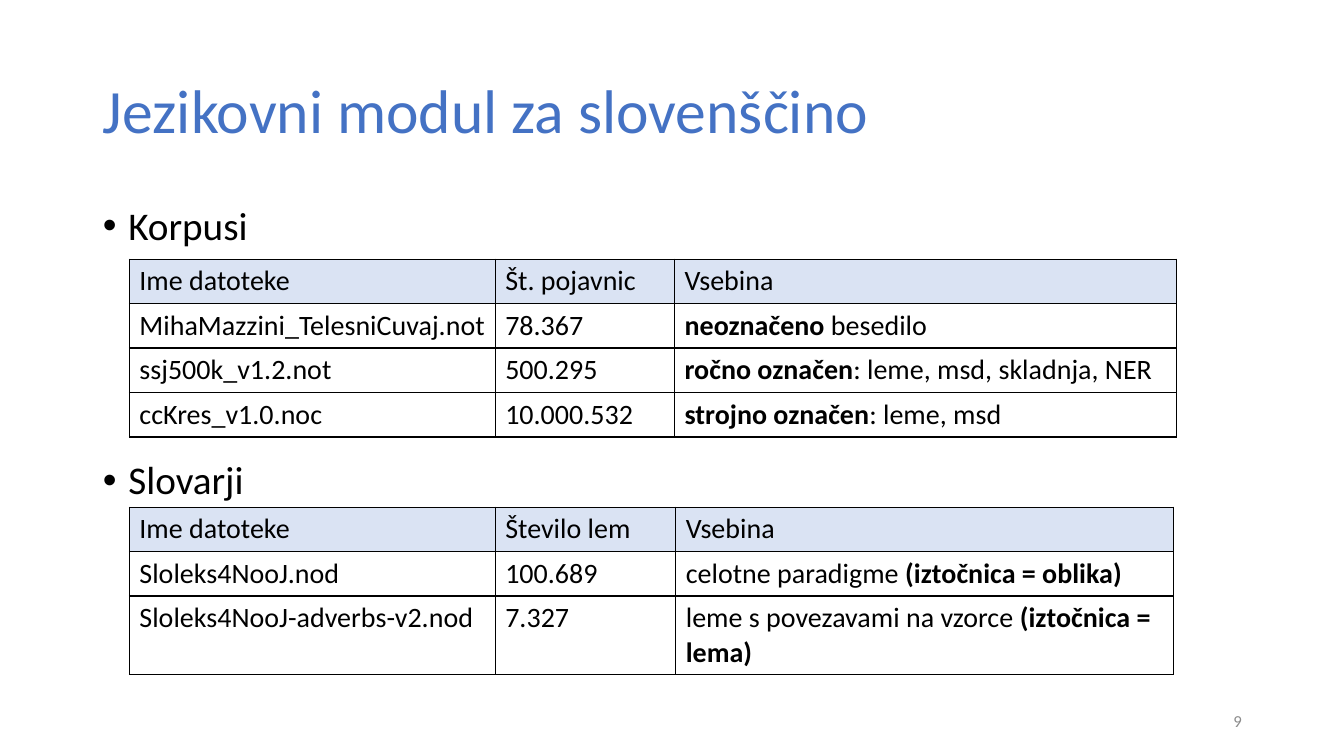
import pptx
import pptx.dml.color
import pptx.enum.text
import pptx.oxml
import pptx.oxml.ns
import pptx.util
from pptx.util import Cm

FONT = "Calibri"
BLACK, BLUE, PALE_BLUE, GREY = "000000", "4472C4", "DAE3F3", "8C8C8C"
ALIGN = pptx.enum.text.PP_ALIGN
ANCHOR = pptx.enum.text.MSO_ANCHOR
NS = pptx.oxml.ns.nsdecls("a")

# Text between ** marks is bold
CORPORA = [
    ["Ime datoteke", "Št. pojavnic", "Vsebina"],
    ["MihaMazzini_TelesniCuvaj.not", "78.367", "**neoznačeno** besedilo"],
    ["ssj500k_v1.2.not", "500.295", "**ročno označen**: leme, msd, skladnja, NER"],
    ["ccKres_v1.0.noc", "10.000.532", "**strojno označen**: leme, msd"],
]
DICTIONARIES = [
    ["Ime datoteke", "Število lem", "Vsebina"],
    ["Sloleks4NooJ.nod", "100.689", "celotne paradigme **(iztočnica = oblika)**"],
    ["Sloleks4NooJ-adverbs-v2.nod", "7.327",
     "leme s povezavami na vzorce **(iztočnica = lema)**"],
]


def rgb(color):
    return pptx.dml.color.RGBColor.from_string(color)


def write(p, text, size=20, color=BLACK, align=ALIGN.LEFT, spacing=None, before=None):
    p.alignment = align
    if spacing:
        p.line_spacing = spacing
    if before:
        p.space_before = pptx.util.Pt(before)
    for i, part in enumerate(text.split("**")):
        if part:
            r = p.add_run()
            r.text = part
            r.font.name = FONT
            r.font.size = pptx.util.Pt(size)
            r.font.bold = i % 2 == 1
            r.font.color.rgb = rgb(color)


def place(sp, left, top, width, height, anchor):
    sp.left, sp.top, sp.width, sp.height = Cm(left), Cm(top), Cm(width), Cm(height)
    tf = sp.text_frame
    tf.word_wrap = True
    tf.auto_size = pptx.enum.text.MSO_AUTO_SIZE.NONE
    tf.vertical_anchor = anchor
    return tf


def add_title(s, text, *box):
    tf = place(s.shapes.title, *box, ANCHOR.MIDDLE)
    write(tf.paragraphs[0], text, size=44, color=BLUE, spacing=0.9)


def add_bullets(s, items, gap, *box):
    tf = place(s.placeholders[1], *box, ANCHOR.TOP)
    for i, text in enumerate(items):
        p = tf.add_paragraph() if i else tf.paragraphs[0]
        pPr = p._p.get_or_add_pPr()
        pPr.set("marL", str(Cm(0.64)))
        pPr.set("indent", str(-Cm(0.64)))
        pPr.append(pptx.oxml.parse_xml(f'<a:buFont {NS} typeface="Arial"/>'))
        pPr.append(pptx.oxml.parse_xml(f'<a:buChar {NS} char="•"/>'))
        write(p, text, size=28, spacing=0.9, before=gap if i else None)


def add_borders(cell):
    tcPr = cell._tc.get_or_add_tcPr()
    for side in ("lnL", "lnR", "lnT", "lnB"):
        tcPr.append(pptx.oxml.parse_xml(
            f'<a:{side} {NS} w="12700"><a:solidFill><a:srgbClr val="{BLACK}"/>'
            f'</a:solidFill></a:{side}>'))


def add_file_table(s, rows, left, top, widths, heights):
    frame = s.shapes.add_table(len(rows), len(widths), Cm(left), Cm(top),
                               Cm(sum(widths)), Cm(sum(heights)))
    table = frame.table
    table.first_row = table.horz_banding = False
    for column, width in zip(table.columns, widths):
        column.width = Cm(width)
    for i, (texts, height) in enumerate(zip(rows, heights)):
        table.rows[i].height = Cm(height)
        for j, text in enumerate(texts):
            cell = table.cell(i, j)
            add_borders(cell)
            if i == 0:
                cell.fill.solid()
                cell.fill.fore_color.rgb = rgb(PALE_BLUE)
            else:
                cell.fill.background()
            write(cell.text_frame.paragraphs[0], text)


def add_slide_number(s, text, *box):
    sp = s.shapes.add_textbox(0, 0, 0, 0)
    tf = place(sp, *box, ANCHOR.MIDDLE)
    write(tf.paragraphs[0], text, size=12, color=GREY, align=ALIGN.RIGHT)


def main():
    prs = pptx.Presentation()
    prs.slide_width, prs.slide_height = Cm(33.87), Cm(19.05)
    s = prs.slides.add_slide(prs.slide_layouts[1])
    add_title(s, "Jezikovni modul za slovenščino", 2.34, 1.02, 29.21, 3.68)
    # The gap leaves room for the first table
    add_bullets(s, ["Korpusi", "Slovarji"], 151.5, 2.34, 5.08, 29.21, 12.09)
    add_file_table(s, CORPORA, 3.26, 6.53, [9.22, 4.52, 12.65], [1.12] * 4)
    add_file_table(s, DICTIONARIES, 3.26, 12.78, [9.22, 4.55, 12.55], [1.12, 1.12, 1.97])
    add_slide_number(s, "9", 23.93, 17.65, 7.62, 1.02)
    prs.save("out.pptx")


if __name__ == "__main__":
    main()
